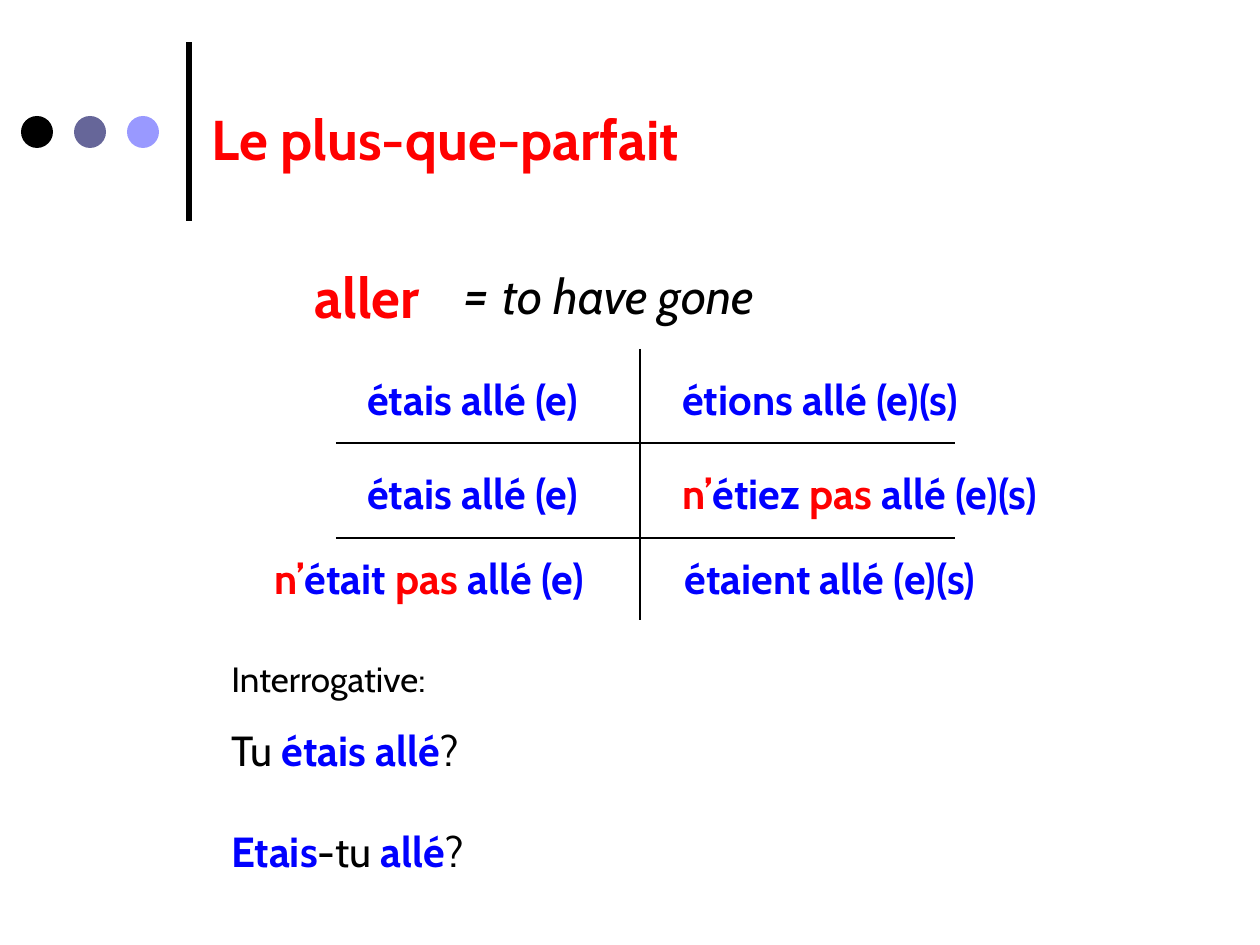
import pptx
import pptx.dml.color
import pptx.enum.shapes
import pptx.enum.text
import pptx.oxml.ns
import pptx.util
from lxml import etree

COLOURS = {
    "black": "000000",
    "red": "FF0000",
    "blue": "0000FF",
    "slate": "666699",
    "lavender": "9999FF",
}


class SlideBuilder:
    """Holds the style and the current slide; lengths are px at 126 to the inch."""

    FONT = "Cabin"
    EMU_PER_PX = 914400 / 126

    def __init__(self, presentation):
        self.presentation = presentation
        presentation.slide_width = self.px(1260)
        presentation.slide_height = self.px(945)
        self.slide = presentation.slides.add_slide(presentation.slide_layouts[5])

    def px(self, length):
        return pptx.util.Emu(round(length * self.EMU_PER_PX))

    def colour(self, name):
        return pptx.dml.color.RGBColor.from_string(COLOURS[name])

    def add_runs(self, paragraph, runs, size):
        """Add (text, colour, style, size) runs; style is "b", "i" or empty, size may be left out."""
        for text, colour, style, *own_size in runs:
            run = paragraph.add_run()
            run.text = text
            run.font.name = self.FONT
            run.font.size = pptx.util.Pt(own_size[0] if own_size else size)
            run.font.bold = style == "b"
            run.font.italic = style == "i"
            run.font.color.rgb = self.colour(colour)

    def fill_frame(self, shape, runs, size):
        frame = shape.text_frame
        frame.word_wrap = True
        frame.auto_size = pptx.enum.text.MSO_AUTO_SIZE.NONE
        frame.vertical_anchor = pptx.enum.text.MSO_ANCHOR.TOP
        frame.paragraphs[0].alignment = pptx.enum.text.PP_ALIGN.LEFT
        self.add_runs(frame.paragraphs[0], runs, size)
        return frame

    def title(self, left, top, width, height, runs, size):
        shape = self.slide.shapes.title
        shape.left, shape.top = self.px(left), self.px(top)
        shape.width, shape.height = self.px(width), self.px(height)
        self.fill_frame(shape, runs, size)

    def text(self, left, top, width, height, runs, size):
        box = self.slide.shapes.add_textbox(*map(self.px, (left, top, width, height)))
        return self.fill_frame(box, runs, size)

    def paragraph(self, frame, runs, size, line_spacing):
        paragraph = frame.add_paragraph()
        paragraph.line_spacing = line_spacing
        self.add_runs(paragraph, runs, size)

    def dot(self, left, top, diameter, colour):
        shape = self.slide.shapes.add_shape(
            pptx.enum.shapes.MSO_SHAPE.OVAL,
            *map(self.px, (left, top, diameter, diameter)))
        shape.shadow.inherit = False
        shape.fill.solid()
        shape.fill.fore_color.rgb = self.colour(colour)
        shape.line.fill.background()

    def line(self, start_x, start_y, end_x, end_y, weight):
        connector = self.slide.shapes.add_connector(
            pptx.enum.shapes.MSO_CONNECTOR.STRAIGHT,
            *map(self.px, (start_x, start_y, end_x, end_y)))
        connector.line.color.rgb = self.colour("black")
        connector.line.width = pptx.util.Pt(weight)
        properties = connector._element.spPr
        etree.SubElement(properties, pptx.oxml.ns.qn("a:effectLst"))


def add_header(builder):
    builder.line(189, 221, 189, 42, 3)
    for index, colour in enumerate(("black", "slate", "lavender")):
        builder.dot(21 + 53 * index, 116, 32, colour)
    builder.title(199, 98, 1029, 81, [("Le plus-que-parfait", "red", "b")], 32)


def add_conjugation(builder):
    builder.text(302, 256, 222, 81, [("aller", "red", "b")], 32)
    builder.text(451, 252, 474, 81,
                 [("= ", "black", "i"), ("to have gone", "black", "i", 28)], 32)

    builder.line(640, 349, 640, 620, 0.75)
    for y in (443, 538):
        builder.line(336, y, 955, y, 0.75)

    def positive(text):
        return [(text, "blue", "b")]

    def negative(verb, participle):
        return [("n’", "red", "b"), (verb + " ", "blue", "b"),
                ("pas ", "red", "b"), (participle, "blue", "b")]

    forms = [
        (355, 367, 265, positive("étais allé (e)")),
        (355, 461, 265, positive("étais allé (e)")),
        (262, 546, 388, negative("était", "allé (e)")),
        (670, 367, 328, positive("étions allé (e)(s)")),
        (670, 461, 432, negative("étiez", "allé (e)(s)")),
        (672, 546, 328, positive("étaient allé (e)(s)")),
    ]
    for left, top, width, runs in forms:
        builder.text(left, top, width, 63, runs, 24)


def add_questions(builder):
    frame = builder.text(219, 651, 895, 271, [("Interrogative:", "black", "")], 20)
    builder.paragraph(frame, [("Tu ", "black", ""), ("étais allé", "blue", "b"),
                              ("?", "black", "")], 24, 1.5)
    builder.paragraph(frame, [("Etais", "blue", "b"), ("-tu ", "black", ""),
                              ("allé", "blue", "b"), ("?", "black", "")], 24, 2.0)


def main():
    presentation = pptx.Presentation()
    builder = SlideBuilder(presentation)
    add_header(builder)
    add_conjugation(builder)
    add_questions(builder)
    presentation.save("out.pptx")


if __name__ == "__main__":
    main()
